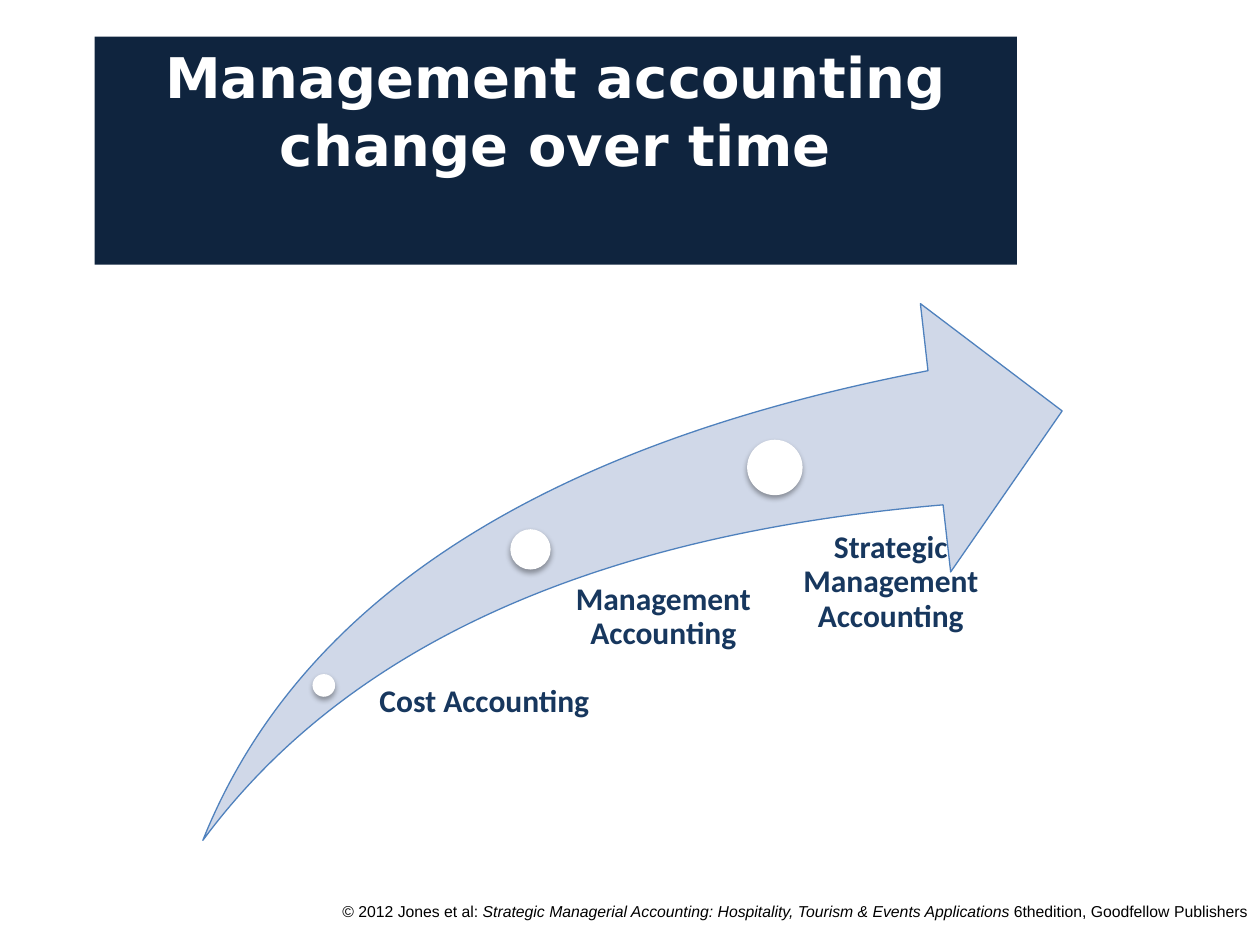
from dataclasses import dataclass

from lxml.etree import SubElement
from pptx import Presentation
from pptx.dml.color import RGBColor
from pptx.enum.shapes import MSO_SHAPE as Shape
from pptx.enum.text import MSO_ANCHOR as Anchor, MSO_AUTO_SIZE as AutoSize, PP_ALIGN as Align
from pptx.oxml.ns import qn
from pptx.util import Inches, Pt

# The grid has 100 columns and 75 rows, each a tenth of an inch.
COLUMNS, ROWS = 100, 75
TITLE_ONLY = 5


@dataclass(frozen=True)
class Theme:
    title_fill: str = "0F243E"
    title_text: str = "FFFFFF"
    arrow_fill: str = "D0D8E8"
    arrow_line: str = "4F81BD"
    marker_fill: str = "FFFFFF"
    label_text: str = "17375E"
    footer_text: str = "000000"
    shadow: str = "000000"
    title_font: str = "DejaVu Sans"
    label_font: str = "Calibri"
    footer_font: str = "Arial"
    title_size: int = 32
    label_size: int = 18
    footer_size: int = 9


@dataclass(frozen=True)
class Stage:
    name: str
    marker: tuple  # left, top, diameter
    label: tuple  # left, top, width, height
    inset: float


THEME = Theme()
STAGES = (
    Stage("Cost Accounting", (24.8, 53.5, 1.8), (25.2, 54.4, 25.6, 12.3), 0.9),
    Stage("Management Accounting", (40.5, 42, 3.2), (42, 46.3, 19.6, 9.5), 1.7),
    Stage("Strategic Management Accounting", (59.3, 34.9, 4.4), (60.2, 42.2, 18.7, 12.1), 2.3),
)
FOOTER = (
    ("© 2012 Jones et al: ", False),
    ("Strategic Managerial Accounting: Hospitality, Tourism & Events Applications ", True),
    ("6thedition, Goodfellow Publishers", False),
)


def grid(*units):
    return [Inches(unit / 10) for unit in units]


def paint(shape, color):
    shape.fill.solid()
    shape.fill.fore_color.rgb = RGBColor.from_string(color)


def add_run(para, text, font, size, color, bold=False, italic=False):
    span = para.add_run()
    span.text = text
    span.font.name = font
    span.font.size = Pt(size)
    span.font.color.rgb = RGBColor.from_string(color)
    span.font.bold, span.font.italic = bold, italic


def first_para(shape, align):
    """Set up a wrapping, top-anchored frame and return its first paragraph."""
    frame = shape.text_frame
    frame.word_wrap = True
    frame.auto_size = AutoSize.NONE
    frame.vertical_anchor = Anchor.TOP
    para = frame.paragraphs[0]
    para.alignment = align
    return para


def add_soft_shadow(shape):
    effects = shape._element.spPr.get_or_add_effectLst()
    shadow = SubElement(effects, qn("a:outerShdw"), blurRad=str(Pt(3.1)), dist=str(Pt(1.8)),
                        dir=str(90 * 60000), algn="ctr", rotWithShape="0")
    color = SubElement(shadow, qn("a:srgbClr"), val=THEME.shadow)
    SubElement(color, qn("a:alpha"), val="35000")


def set_title(slide, text):
    title = slide.shapes.title
    title.left, title.top, title.width, title.height = grid(7.5, 2.9, 73.2, 18.1)
    paint(title, THEME.title_fill)
    para = first_para(title, Align.CENTER)
    add_run(para, text, THEME.title_font, THEME.title_size, THEME.title_text, bold=True)


def add_footer(slide):
    box = slide.shapes.add_textbox(*grid(22.3, 71.1, COLUMNS - 22.3, ROWS - 71.1))
    para = first_para(box, Align.RIGHT)
    for text, italic in FOOTER:
        add_run(para, text, THEME.footer_font, THEME.footer_size, THEME.footer_text,
                italic=italic)


def add_arrow(shapes):
    arrow = shapes.add_shape(Shape.SWOOSH_ARROW, *grid(16.1, 24.1, 68.2, 42.6))
    arrow.adjustments[0] = arrow.adjustments[1] = 0.25
    arrow.shadow.inherit = False
    paint(arrow, THEME.arrow_fill)
    arrow.line.color.rgb = RGBColor.from_string(THEME.arrow_line)
    arrow.line.width = Pt(0.75)


def add_marker(shapes, left, top, diameter):
    marker = shapes.add_shape(Shape.OVAL, *grid(left, top, diameter, diameter))
    marker.shadow.inherit = False
    paint(marker, THEME.marker_fill)
    marker.line.fill.background()
    add_soft_shadow(marker)


def add_label(shapes, stage):
    box = shapes.add_textbox(*grid(*stage.label))
    para = first_para(box, Align.CENTER)
    para.line_spacing = 0.9
    frame = box.text_frame
    frame.margin_left, frame.margin_top, frame.margin_right, frame.margin_bottom = grid(
        stage.inset, 0, 0, 0)
    add_run(para, stage.name, THEME.label_font, THEME.label_size, THEME.label_text, bold=True)


def main():
    deck = Presentation()
    deck.slide_width, deck.slide_height = grid(COLUMNS, ROWS)
    slide = deck.slides.add_slide(deck.slide_layouts[TITLE_ONLY])
    add_footer(slide)
    set_title(slide, "Management accounting change over time")
    timeline = slide.shapes.add_group_shape().shapes
    add_arrow(timeline)
    for stage in STAGES:
        add_marker(timeline, *stage.marker)
        add_label(timeline, stage)
    deck.save("out.pptx")


if __name__ == "__main__":
    main()
